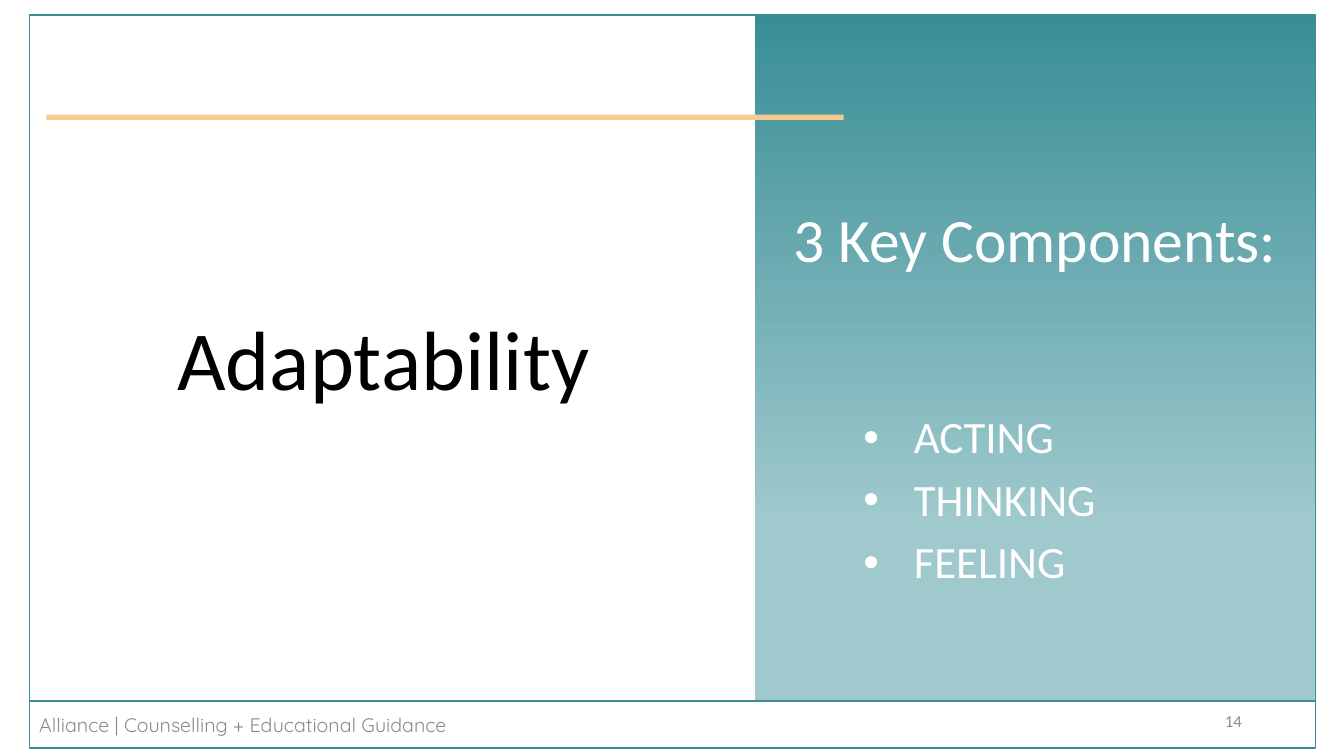
from dataclasses import dataclass

from lxml import etree
from pptx import Presentation
from pptx.dml.color import RGBColor
from pptx.enum.shapes import MSO_SHAPE
from pptx.enum.text import MSO_ANCHOR, PP_ALIGN
from pptx.oxml.ns import qn
from pptx.util import Cm, Pt

RECT = MSO_SHAPE.RECTANGLE
TOP, MIDDLE = MSO_ANCHOR.TOP, MSO_ANCHOR.MIDDLE
LEFT, RIGHT = PP_ALIGN.LEFT, PP_ALIGN.RIGHT


@dataclass(frozen=True)
class Theme:
    teal: str = "398E96"
    pale_teal: str = "9FC9CD"
    apricot: str = "F8CA90"
    white: str = "FFFFFF"
    black: str = "000000"
    grey: str = "8C8C8C"
    body_font: str = "Calibri"
    footer_font: str = "Quicksand"
    topic_size: int = 60
    title_size: int = 44
    list_size: int = 32
    footer_size: int = 14
    number_size: int = 12


class SlideBuilder:
    def __init__(self, slide, theme):
        self.slide = slide
        self.theme = theme

    def rect(self, box, fill=None, line=None):
        sp = self.slide.shapes.add_shape(RECT, *map(Cm, box))
        sp.shadow.inherit = False
        if fill:
            sp.fill.solid()
            sp.fill.fore_color.rgb = RGBColor.from_string(fill)
        else:
            sp.fill.background()
        if line:
            sp.line.color.rgb = RGBColor.from_string(line)
            sp.line.width = Pt(1)
        else:
            sp.line.fill.background()
        return sp

    def gradient_panel(self, box, start, end, end_position):
        """Fade from start at the top to end, which holds below end_position."""
        sp = self.rect(box)
        sp.fill.gradient()
        sp.fill.gradient_angle = 270
        stops = zip(sp.fill.gradient_stops, (start, end), (0, end_position))
        for stop, color, position in stops:
            stop.color.rgb = RGBColor.from_string(color)
            stop.position = position

    def set_text(self, sp, text, size, color, font=None, align=LEFT, anchor=MIDDLE):
        tf = sp.text_frame
        tf.word_wrap = True
        tf.vertical_anchor = anchor
        tf.text = text
        for p in tf.paragraphs:
            p.alignment = align
            for r in p.runs:
                r.font.name = font or self.theme.body_font
                r.font.size = Pt(size)
                r.font.color.rgb = RGBColor.from_string(color)
        return tf

    def text(self, box, text, size, color, **style):
        sp = self.slide.shapes.add_textbox(*map(Cm, box))
        return self.set_text(sp, text, size, color, **style)

    def bullets(self, box, items, size, color):
        tf = self.text(box, "\n".join(items), size, color, anchor=TOP)
        for p in tf.paragraphs:
            p.line_spacing = 0.9
            p.space_before = Pt(10)
            pPr = p._p.get_or_add_pPr()
            pPr.set("marL", str(Cm(1.27)))
            pPr.set("indent", str(-Cm(1.27)))
            etree.SubElement(pPr, qn("a:buFont")).set("typeface", "Arial")
            etree.SubElement(pPr, qn("a:buChar")).set("char", "•")


def main():
    prs = Presentation()
    prs.slide_width, prs.slide_height = Cm(33.87), Cm(19.05)
    theme = Theme()
    s = SlideBuilder(prs.slides.add_slide(prs.slide_layouts[6]), theme)

    left, top, width, height = 0.74, 0.38, 32.41, 17.29
    panel_width = 14.12
    footer_top = 17.66

    s.gradient_panel((left + width - panel_width, top, panel_width, height),
                     theme.teal, theme.pale_teal, 0.74)
    footer = s.rect((left, footer_top, width, 1.19), line=theme.teal)
    s.set_text(footer, "Alliance | Counselling + Educational Guidance",
               theme.footer_size, theme.grey, font=theme.footer_font)
    s.text((23.93, footer_top, 7.62, 1.02), "14",
           theme.number_size, theme.grey, align=RIGHT)
    s.rect((left, top, width, height), line=theme.teal)
    s.rect((1.17, 2.89, 20.09, 0.13), fill=theme.apricot)

    title = s.text((19.74, 4.52, 13.26, 3.18), "3 Key Components:",
                   theme.title_size, theme.white)
    title.paragraphs[0].line_spacing = 0.9
    s.bullets((21.51, 10.34, 9.7, 5.51), ["ACTING", "THINKING", "FEELING"],
              theme.list_size, theme.white)
    s.text((4.22, 7.59, 11.51, 2.82), "Adaptability",
           theme.topic_size, theme.black, anchor=TOP)

    prs.save("out.pptx")


if __name__ == "__main__":
    main()
